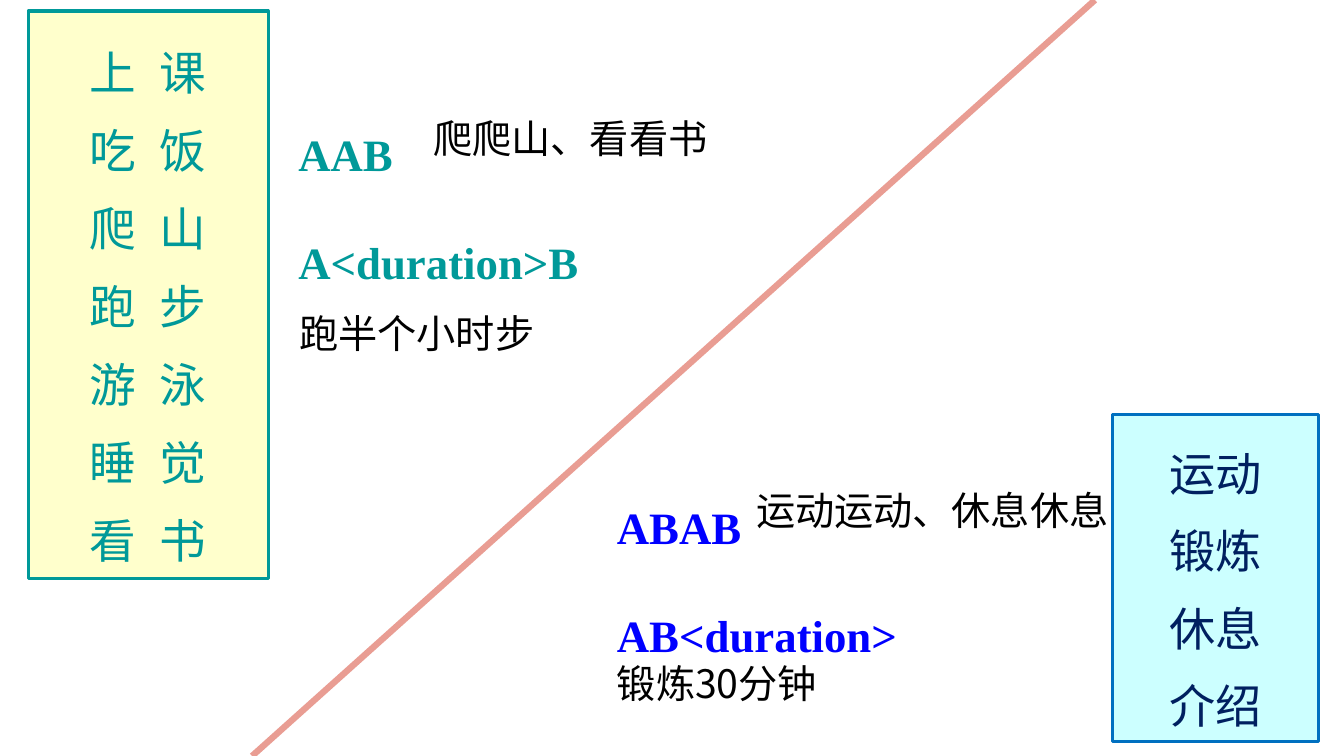
from dataclasses import dataclass

from lxml.etree import SubElement
from pptx import Presentation
from pptx.dml.color import RGBColor
from pptx.enum.shapes import MSO_CONNECTOR as Connector, MSO_SHAPE as Shape
from pptx.enum.text import MSO_ANCHOR as Anchor, PP_ALIGN as Align
from pptx.oxml.ns import qn
from pptx.util import Inches, Pt

EN_SPACE = chr(0x2002)
SEPARABLE_VERBS = ["上课", "吃饭", "爬山", "跑步", "游泳", "睡觉", "看书"]
WHOLE_VERBS = ["运动", "锻炼", "休息", "介绍"]


@dataclass(frozen=True)
class Theme:
    """Colours, fonts and type sizes of the slide."""
    teal: str = "009999"
    cream: str = "FFFFCC"
    sky: str = "CCFFFF"
    azure: str = "0070C0"
    navy: str = "002060"
    blue: str = "0000FF"
    coral: str = "E99D93"
    black: str = "000000"
    chinese: str = "Noto Sans CJK SC"
    latin: str = "Times New Roman"
    verb: float = 33
    separable: float = 33.3
    pattern: float = 32
    example: float = 28


THEME = Theme()

VERB_CARDS = [
    (SEPARABLE_VERBS, EN_SPACE, (0.28, 0.11, 2.38, 5.63), THEME.cream,
     THEME.teal, THEME.teal, THEME.separable, 55.7),
    (WHOLE_VERBS, "", (11.03, 4.11, 2.05, 3.25), THEME.sky,
     THEME.azure, THEME.navy, THEME.verb, 55.2),
]
PATTERNS = [
    (["AAB", "A<duration>B"], (2.86, 0.67, 4.79, 2.09), THEME.teal),
    (["ABAB", "AB<duration>"], (6.02, 4.37, 4.84, 2.09), THEME.blue),
]
EXAMPLES = [
    ("爬爬山、看看书", (4.2, 1.05, 3.29, 0.57)),
    ("跑半个小时步", (2.87, 2.99, 3.81, 0.57)),
    ("运动运动、休息休息", (7.4, 4.74, 3.81, 0.57)),
    ("锻炼30分钟", (6.02, 6.46, 3.81, 0.57)),
]


def rgb(colour):
    return RGBColor.from_string(colour)


def write(shape, lines, *, size, colour, font, leading, bold=False,
          align=Align.LEFT, anchor=Anchor.TOP):
    frame = shape.text_frame
    frame.word_wrap = True
    frame.vertical_anchor = anchor
    frame.text = "\n".join(lines)
    for para in frame.paragraphs:
        para.alignment = align
        para.line_spacing = Pt(leading)
        for span in para.runs:
            span.font.size = Pt(size)
            span.font.bold = bold
            span.font.color.rgb = rgb(colour)
            span.font.name = font
            SubElement(span.font._element, qn("a:ea"), typeface=font)


def add_verb_card(page, verbs, gap, place, fill, edge, colour, size, leading):
    card = page.shapes.add_shape(Shape.RECTANGLE, *map(Inches, place))
    card.shadow.inherit = False
    card.fill.solid()
    card.fill.fore_color.rgb = rgb(fill)
    card.line.color.rgb = rgb(edge)
    card.line.width = Pt(2.25)
    write(card, [gap.join(verb) for verb in verbs], size=size, colour=colour,
          font=THEME.chinese, leading=leading, align=Align.CENTER,
          anchor=Anchor.MIDDLE)


def add_divider(page, start, end):
    divider = page.shapes.add_connector(
        Connector.STRAIGHT, *map(Inches, start + end))
    divider.line.color.rgb = rgb(THEME.coral)
    divider.line.width = Pt(4.5)
    SubElement(divider._element.spPr, qn("a:effectLst"))


def add_label(page, lines, place, **style):
    box = page.shapes.add_textbox(*map(Inches, place))
    write(box, lines, **style)


def main():
    deck = Presentation()
    deck.slide_width, deck.slide_height = Inches(13.33), Inches(7.5)
    page = deck.slides.add_slide(deck.slide_layouts.get_by_name("Blank"))
    for card in VERB_CARDS:
        add_verb_card(page, *card)
    add_divider(page, (10.86, 0), (2.5, 7.5))
    for lines, place, colour in PATTERNS:
        add_label(page, lines, place, size=THEME.pattern, colour=colour,
                  font=THEME.latin, leading=77, bold=True)
    for text, place in EXAMPLES:
        add_label(page, [text], place, size=THEME.example,
                  colour=THEME.black, font=THEME.chinese, leading=36)
    deck.save("out.pptx")


if __name__ == "__main__":
    main()
